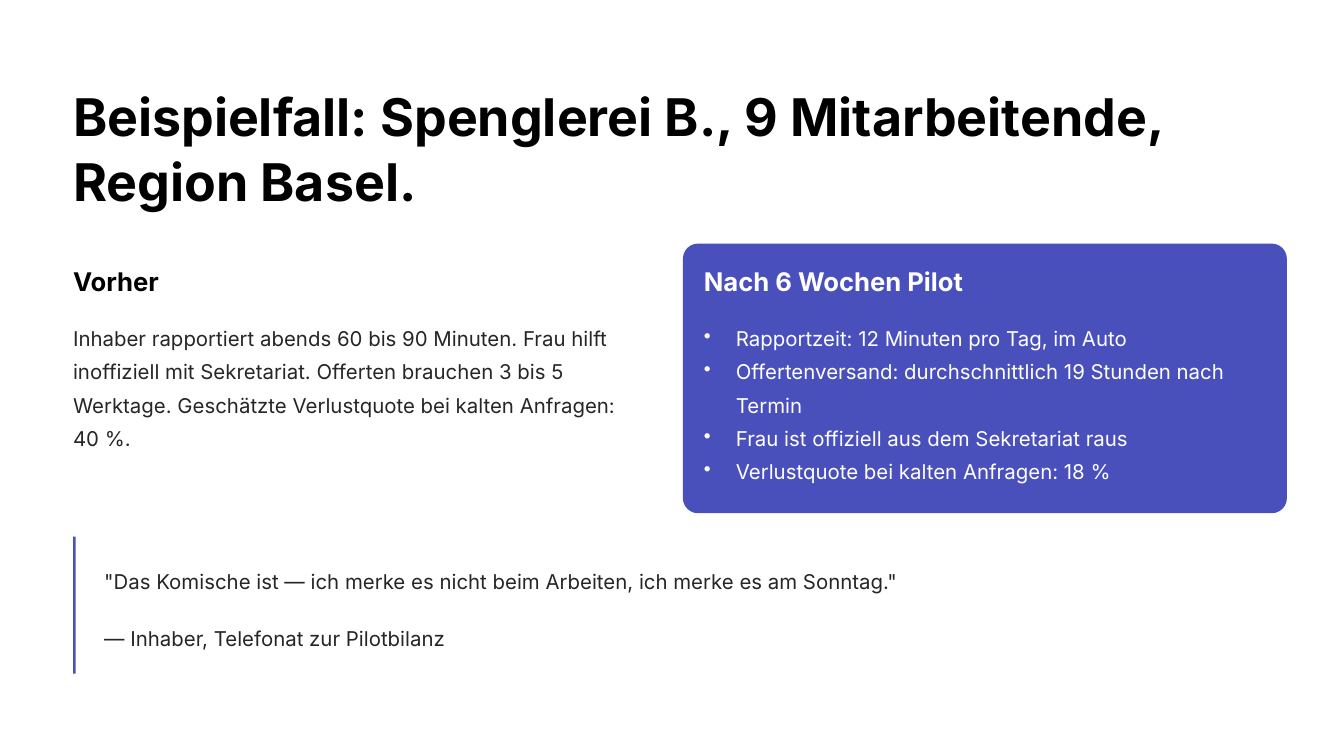
from dataclasses import dataclass

from lxml import etree
from pptx import Presentation
from pptx.dml.color import RGBColor
from pptx.enum import shapes, text
from pptx.oxml import ns
from pptx.util import Inches, Pt


@dataclass(frozen=True)
class Style:
    size: float
    leading: float
    bold: bool = False


@dataclass(frozen=True)
class Theme:
    font: str = "Inter"
    paper: str = "FFFFFF"
    ink: str = "000000"
    body_ink: str = "272525"
    accent: str = "4950BC"
    title: Style = Style(44.5, 55.5, True)
    heading: Style = Style(22, 27.5, True)
    body: Style = Style(17.5, 28.5)


@dataclass(frozen=True)
class Box:
    left: float
    top: float
    width: float
    height: float

    def inside(self, left, top, width, height):
        return Box(self.left + left, self.top + top, width, height)

    def lengths(self):
        return [Inches(n) for n in (self.left, self.top, self.width, self.height)]


THEME = Theme()
BULLET_INDENT = 0.38


def add_bullet(para):
    props = para._p.get_or_add_pPr()
    props.set("marL", str(Inches(BULLET_INDENT)))
    props.set("indent", str(-Inches(BULLET_INDENT)))
    etree.SubElement(props, ns.qn("a:buChar")).set("char", "•")


def add_text(page, box, lines, style, color, bullets=False):
    frame = page.shapes.add_textbox(*box.lengths()).text_frame
    frame.word_wrap = True
    frame.margin_left = frame.margin_right = 0
    frame.margin_top = frame.margin_bottom = 0
    frame.vertical_anchor = text.MSO_ANCHOR.TOP
    for index, line in enumerate(lines):
        para = frame.add_paragraph() if index else frame.paragraphs[0]
        if bullets:
            add_bullet(para)
        para.line_spacing = Pt(style.leading)
        span = para.add_run()
        span.text = line
        span.font.name = THEME.font
        span.font.size = Pt(style.size)
        span.font.bold = style.bold
        span.font.color.rgb = RGBColor.from_string(color)


def add_panel(page, kind, box):
    panel = page.shapes.add_shape(kind, *box.lengths())
    panel.shadow.inherit = False
    panel.fill.solid()
    panel.fill.fore_color.rgb = RGBColor.from_string(THEME.accent)
    panel.line.fill.background()
    return panel


def add_title(page, box):
    title = "Beispielfall: Spenglerei B., 9 Mitarbeitende, Region Basel."
    add_text(page, box, [title], THEME.title, THEME.ink)


def add_column(page, box, heading, lines, heading_color, body_color, bullets=False):
    add_text(page, box.inside(0, 0, box.width, 0.39), [heading], THEME.heading, heading_color)
    body = box.inside(0, 0.63, box.width, box.height - 0.63)
    add_text(page, body, lines, THEME.body, body_color, bullets)


def add_before(page, box):
    story = (
        "Inhaber rapportiert abends 60 bis 90 Minuten. Frau hilft inoffiziell mit "
        "Sekretariat. Offerten brauchen 3 bis 5 Werktage. Geschätzte Verlustquote "
        "bei kalten Anfragen: 40 %."
    )
    add_column(page, box, "Vorher", [story], THEME.ink, THEME.body_ink)


def add_after(page, box):
    results = [
        "Rapportzeit: 12 Minuten pro Tag, im Auto",
        "Offertenversand: durchschnittlich 19 Stunden nach Termin",
        "Frau ist offiziell aus dem Sekretariat raus",
        "Verlustquote bei kalten Anfragen: 18 %",
    ]
    card = add_panel(page, shapes.MSO_SHAPE.ROUNDED_RECTANGLE, box)
    card.adjustments[0] = 0.056
    content = box.inside(0.25, 0.25, box.width - 0.5, box.height - 0.34)
    add_column(page, content, "Nach 6 Wochen Pilot", results,
               THEME.paper, THEME.paper, bullets=True)


def add_quote(page, box):
    lines = [
        '"Das Komische ist — ich merke es nicht beim Arbeiten, ich merke es am Sonntag."',
        "— Inhaber, Telefonat zur Pilotbilanz",
    ]
    add_panel(page, shapes.MSO_SHAPE.RECTANGLE, box.inside(0, 0, 0.03, box.height))
    for index, line in enumerate(lines):
        row = box.inside(0.37, 0.28 + 0.68 * index, box.width - 0.37, 0.4)
        add_text(page, row, [line], THEME.body, THEME.body_ink)


def main():
    deck = Presentation()
    deck.slide_width, deck.slide_height = Inches(16), Inches(9)
    page = deck.slides.add_slide(deck.slide_layouts[6])
    page.background.fill.solid()
    page.background.fill.fore_color.rgb = RGBColor.from_string(THEME.paper)
    add_title(page, Box(0.87, 0.98, 14.26, 1.55))
    add_before(page, Box(0.87, 3.15, 6.83, 2.22))
    add_after(page, Box(8.13, 2.9, 7.19, 3.21))
    add_quote(page, Box(0.87, 6.39, 14.26, 1.63))
    deck.save("out.pptx")


if __name__ == "__main__":
    main()
